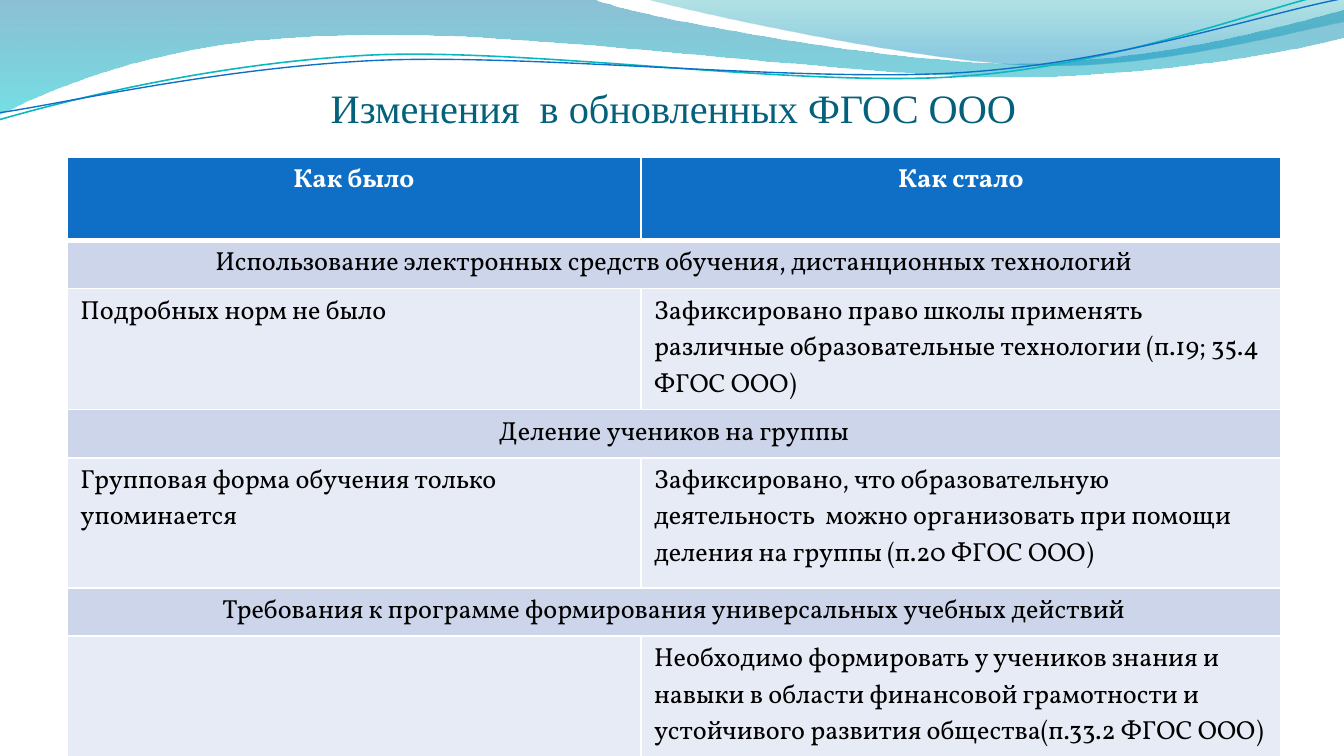
from dataclasses import dataclass
from lxml import etree
from pptx import Presentation
from pptx.dml.color import RGBColor as Rgb
from pptx.enum import text as te
from pptx.oxml import ns
from pptx.util import Cm, Pt


@dataclass(frozen=True)
class Theme:
    title: str = "04617B"
    head: str = "0F6FC6"
    band: str = "CCD5EA"
    cell: str = "E7EBF5"
    white: str = "FFFFFF"
    ink: str = "000000"
    teal: str = "0AB8BF"
    serif: str = "Times New Roman"
    body: str = "Vollkorn"
    big: float = 21.6
    size: float = 14


T = Theme()

# Outlines in cm: a start point, then lines (x, y) or curves (two controls, end).
# Gradient stops are colour, position and opacity in percent.
WAVES = [
    ([(0, 0), (11.18, -0.03),
      (12.09, 0.33, 16.87, 1.19, 19.25, 1.19),
      (21.67, 1.19, 24.33, 0.48, 25.4, 0.18), (25.43, 0.69),
      (24.97, 0.84, 22.1, 1.45, 18.95, 1.45),
      (15.8, 1.42, 9.7, 0.53, 6.53, 0.66),
      (3.28, 0.69, 1.17, 1.57, -0.03, 2.16), (0, 0)],
     [("0074A1", 0, 45), ("00C6CF", 1, 55)]),
    ([(12.17, -0.03),
      (12.93, 0.2, 17.32, 1.17, 19.53, 1.24),
      (21.74, 1.32, 24.41, 0.61, 25.4, 0.41), (25.4, 0), (12.17, -0.03)],
     [("00A1A9", 0, 30), ("008BBF", 0.8, 45)]),
]
CURVES = [
    ([(0, 2.26), (1.22, 1.91, 4.01, 1.19, 7.04, 1.04),
      (10.06, 0.91, 15.04, 1.65, 18.08, 1.45),
      (21.16, 1.24, 23.85, 0.15, 25.35, -0.18)], T.teal, 0.85),
    ([(0, 2.13), (1.19, 1.96, 4.17, 1.27, 7.19, 1.14),
      (10.24, 1.02, 15.16, 1.57, 18.21, 1.37),
      (21.23, 1.17, 23.9, 0.25, 25.4, -0.03)], T.head, 0.75),
]

# A row of one text spans both columns.
ROWS = [
    (1.57, ["Как было", "Как стало"]),
    (0.76, ["Использование электронных средств обучения, дистанционных технологий"]),
    (1.9, ["Подробных норм не было",
           "Зафиксировано право школы применять различные образовательные "
           "технологии (п.19; 35.4 ФГОС ООО)"]),
    (0.76, ["Деление учеников на группы"]),
    (2.46, ["Групповая форма обучения только упоминается",
            "Зафиксировано, что образовательную деятельность  можно "
            "организовать при помощи деления на группы (п.20 ФГОС ООО)"]),
    (0.76, ["Требования к программе формирования универсальных учебных действий"]),
    (2.46, ["",
            "Необходимо формировать у учеников знания и навыки в области "
            "финансовой грамотности и устойчивого развития "
            "общества(п.33.2 ФГОС ООО)"]),
]


def bend(shape, path):
    """Join each three line steps that belong to a curve into one cubic step."""
    steps = iter(list(shape.element.iter(ns.qn("a:lnTo"))))
    for seg in path[1:]:
        first = next(steps)
        if len(seg) == 2:
            continue
        first.tag_name = None
        cubic = etree.Element(ns.qn("a:cubicBezTo"))
        first.addprevious(cubic)
        for step in (first, next(steps), next(steps)):
            cubic.append(step[0])
            step.getparent().remove(step)


def outline(slide, path, close):
    dots = [(Cm(seg[i]), Cm(seg[i + 1]))
            for seg in path for i in range(0, len(seg), 2)]
    pen = slide.shapes.build_freeform(*dots[0])
    pen.add_line_segments(dots[1:], close=close)
    shape = pen.convert_to_shape()
    bend(shape, path)
    shape.shadow.inherit = False
    return shape


def wave(slide, path, stops):
    shape = outline(slide, path, True)
    shape.line.fill.background()
    fill = shape.fill
    fill.gradient()
    fill.gradient_angle = 270
    for stop, (color, pos, _) in zip(fill.gradient_stops, stops):
        stop.color.rgb = Rgb.from_string(color)
        stop.position = pos
    tags = shape.element.spPr.iter(ns.qn("a:srgbClr"))
    for tag, (_, _, alpha) in zip(tags, stops):
        etree.SubElement(tag, ns.qn("a:alpha")).set("val", str(alpha * 1000))


def curve(slide, path, color, width):
    shape = outline(slide, path, False)
    shape.fill.background()
    shape.line.color.rgb = Rgb.from_string(color)
    shape.line.width = Pt(width)


def write(para, words, font, size, color, bold=False):
    run = para.add_run()
    run.text = words
    run.font.name = font
    run.font.size = Pt(size)
    run.font.bold = bold
    run.font.color.rgb = Rgb.from_string(color)


def heading(slide, words):
    box = slide.shapes.title
    box.element.getparent().append(box.element)  # bring in front of the waves
    box.left, box.top, box.width, box.height = Cm(1.3), Cm(1.6), Cm(22.86), Cm(0.89)
    frame = box.text_frame
    frame.auto_size = te.MSO_AUTO_SIZE.NONE
    frame.word_wrap = True
    frame.vertical_anchor = te.MSO_ANCHOR.BOTTOM
    frame.margin_left = frame.margin_right = frame.margin_bottom = 0
    frame.margin_top = Cm(0.13)
    para = frame.paragraphs[0]
    para.alignment = te.PP_ALIGN.CENTER
    write(para, words, T.serif, T.big, T.title)


def border(cell, widths):
    """Draw white edges; widths are left, right, top and bottom in points."""
    props = cell._tc.get_or_add_tcPr()
    for i, (side, width) in enumerate(zip("LRTB", widths)):
        edge = etree.Element(ns.qn("a:ln" + side), w=str(Pt(width)))
        fill = etree.SubElement(edge, ns.qn("a:solidFill"))
        etree.SubElement(fill, ns.qn("a:srgbClr")).set("val", T.white)
        props.insert(i, edge)


def style(cell, fill, widths):
    cell.margin_left = cell.margin_right = Cm(0.25)
    cell.margin_top = cell.margin_bottom = Cm(0.11)
    cell.fill.solid()
    cell.fill.fore_color.rgb = Rgb.from_string(fill)
    border(cell, widths)


def grid(slide, rows):
    high = sum(h for h, _ in rows)
    table = slide.shapes.add_table(
        len(rows), 2, Cm(1.27), Cm(2.97), Cm(22.94), Cm(high)).table
    table.horz_banding = False
    for col, width in zip(table.columns, (10.84, 12.1)):
        col.width = Cm(width)
    for r, (height, texts) in enumerate(rows):
        table.rows[r].height = Cm(height)
        head, wide = r == 0, len(texts) == 1
        fill = T.head if head else T.band if wide else T.cell
        widths = (1, 1, 3 if r == 1 else 1, 3 if head else 1)
        if wide:
            table.cell(r, 0).merge(table.cell(r, 1))
        for c in range(2):
            cell = table.cell(r, c)
            style(cell, fill, widths)
            para = cell.text_frame.paragraphs[0]
            if head or wide:
                para.alignment = te.PP_ALIGN.CENTER
            if c < len(texts) and texts[c]:
                write(para, texts[c], T.body, T.size,
                      T.white if head else T.ink, head)
            else:  # keep an empty cell from stretching its row
                etree.SubElement(para._p, ns.qn("a:endParaRPr"),
                                 sz=str(T.size * 100))


def main():
    deck = Presentation()
    deck.slide_width, deck.slide_height = Cm(25.4), Cm(14.29)
    slide = deck.slides.add_slide(deck.slide_layouts[5])
    for path, stops in WAVES:
        wave(slide, path, stops)
    for path, color, width in CURVES:
        curve(slide, path, color, width)
    heading(slide, "Изменения  в обновленных ФГОС ООО")
    grid(slide, ROWS)
    deck.save("out.pptx")


if __name__ == "__main__":
    main()
